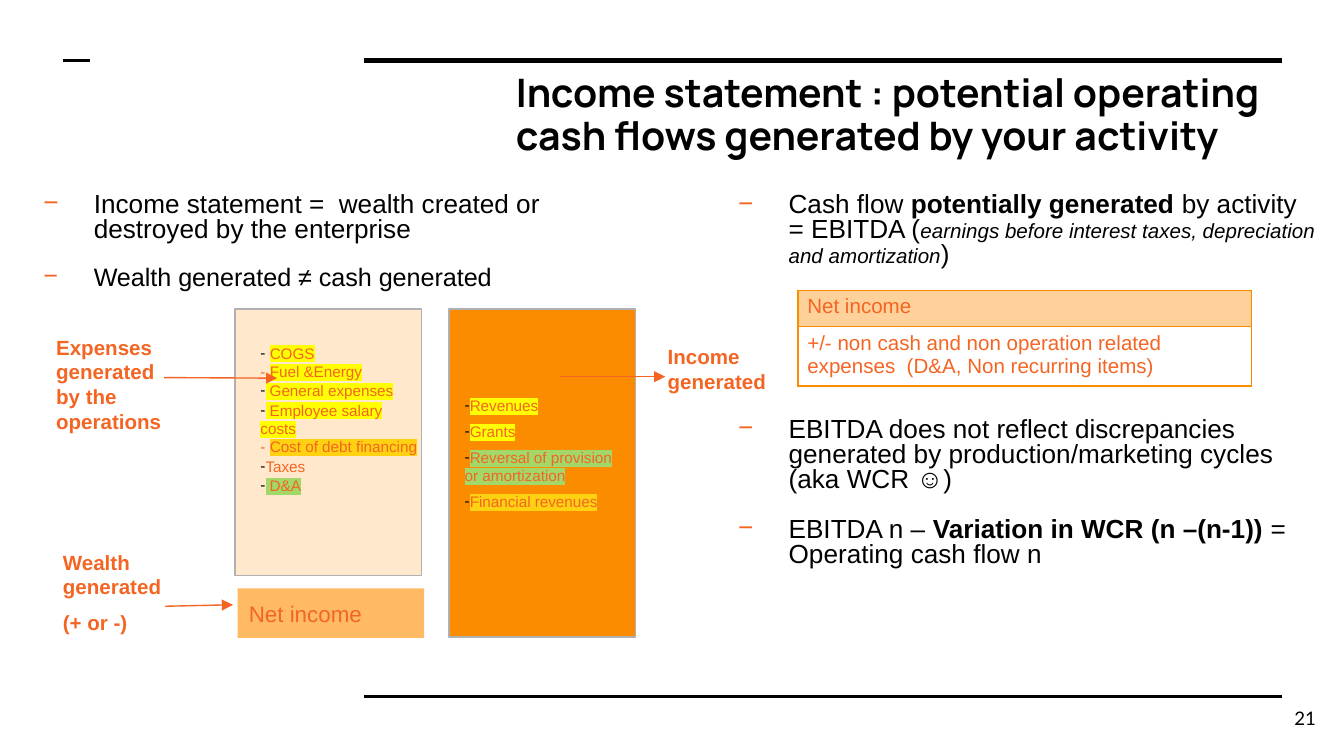
from lxml.etree import SubElement
from pptx import Presentation
from pptx.dml.color import RGBColor
from pptx.enum.shapes import MSO_CONNECTOR, MSO_SHAPE
from pptx.enum.text import MSO_ANCHOR, PP_ALIGN
from pptx.oxml.ns import qn
from pptx.util import Pt

BLACK = RGBColor(0x00, 0x00, 0x00)
ACCENT = RGBColor(0xF4, 0x65, 0x24)
ORANGE = RGBColor(0xFB, 0x8C, 0x00)
CREAM = RGBColor(0xFF, 0xE8, 0xCB)
PEACH = RGBColor(0xFF, 0xBA, 0x63)
GREY = RGBColor(0xB1, 0xB1, 0xB1)
YELLOW = RGBColor(0xFF, 0xFF, 0x00)
GOLD = RGBColor(0xFE, 0xD2, 0x11)
GREEN = RGBColor(0xA3, 0xD8, 0x69)

TITLE = "Income statement : potential operating cash flows generated by your activity"
PAGE = "21"

LEFT_POINTS = [
    (0, 14, [("Income statement =  wealth created or destroyed by the enterprise", {})]),
    (12.4, 13.5, [("Wealth generated ≠ cash generated", {})]),
]
RIGHT_POINTS = [
    (0, 14, [
        ("Cash flow ", {}),
        ("potentially generated ", {"bold": True}),
        ("by activity = EBITDA (", {}),
        ("earnings before interest taxes, depreciation and amortization",
         {"italic": True, "size": Pt(11)}),
        (")", {}),
    ]),
    (80, 14, [("EBITDA does not reflect discrepancies generated by "
               "production/marketing cycles (aka WCR ☺)", {})]),
    (13.4, 14, [
        ("EBITDA n – ", {}),
        ("Variation in WCR (n –(n-1)) ", {"bold": True}),
        ("= Operating cash flow n", {}),
    ]),
]
EXPENSES = [
    [(" ", None), ("COGS", YELLOW), ("\n", None), ("- ", None), ("Fuel &Energy", YELLOW)],
    [(" General expenses", YELLOW)],
    [(" Employee salary costs", YELLOW), ("\n", None), ("- ", None),
     ("Cost of debt financing", GOLD)],
    [("Taxes", None)],
    [(" D&A", GREEN)],
]
INCOME = [
    [("Revenues", YELLOW)],
    [("Grants", YELLOW)],
    [("Reversal of provision or amortization", GREEN)],
    [("Financial revenues", GOLD)],
]
LABELS = [
    ((23, 175.7, 78, 60.5), ["Expenses generated by the operations"]),
    ((350.6, 180.7, 67, 34), ["Income generated"]),
    ((26.6, 290.9, 78, 55), ["Wealth generated", "(+ or -)"]),
]
BLOCKS = [
    ((126, 165.6, 100, 142.6), CREAM, GREY),
    ((240.5, 165.6, 100, 175.7), ORANGE, GREY),
]
NET_INCOME = "Net income"
NET_INCOME_BOX = (127.3, 315.2, 100, 26.5)
RECONCILIATION = [
    NET_INCOME,
    "+/- non cash and non operation related expenses  (D&A, Non recurring items)",
]
RULES = [(195, 32.4, 687, 3), (195, 373, 687, 1.5), (33.6, 32.4, 48, 1.5)]
ARROWS = [
    (88, 202.3, 148.5, 202.6),
    (300.2, 201.8, 356.4, 201.8),
    (88.5, 324.8, 124.8, 324),
]

deck = Presentation()
deck.slide_width, deck.slide_height = Pt(720), Pt(405)
slide = deck.slides.add_slide(deck.slide_layouts[6])


def points(values):
    return [Pt(value) for value in values]


def style(font, size, color, name="Arial", bold=False):
    font.size, font.name, font.bold = Pt(size), name, bold
    font.color.rgb = color


def add_text(box, inset_y=3.6):
    frame = slide.shapes.add_textbox(*points(box)).text_frame
    frame.word_wrap = True
    frame.margin_left = frame.margin_right = Pt(7.2)
    frame.margin_top = frame.margin_bottom = Pt(inset_y)
    return frame


def paragraphs(frame, items):
    for index, item in enumerate(items):
        yield (frame.add_paragraph() if index else frame.paragraphs[0]), item


def add_bullet(paragraph, mark, color, margin, indent):
    props = paragraph._p.get_or_add_pPr()
    props.set("marL", str(Pt(margin)))
    props.set("indent", str(Pt(indent)))
    tint = SubElement(props, qn("a:buClr"))
    SubElement(tint, qn("a:srgbClr"), val=str(color))
    SubElement(props, qn("a:buFont"), typeface="Arial")
    SubElement(props, qn("a:buChar"), char=mark)


def add_points(box, entries):
    for paragraph, (before, size, runs) in paragraphs(add_text(box, 7.2), entries):
        paragraph.line_spacing = 0.8
        paragraph.space_before = Pt(before)
        add_bullet(paragraph, "−", ACCENT, 36, -27)
        style(paragraph.font, size, BLACK)
        for text, changes in runs:
            run = paragraph.add_run()
            run.text = text
            for attribute, value in changes.items():
                setattr(run.font, attribute, value)


def add_accounts(box, accounts, gap):
    for paragraph, (index, runs) in paragraphs(add_text(box), enumerate(accounts)):
        paragraph.space_before = Pt(gap if index else 0)
        add_bullet(paragraph, "-", BLACK, 0, -4.3)
        style(paragraph.font, 8.2, ACCENT)
        for text, marker in runs:
            if text == "\n":
                paragraph.add_line_break()
                continue
            run = paragraph.add_run()
            run.text = text
            if marker:
                highlight = SubElement(run._r.get_or_add_rPr(), qn("a:highlight"))
                SubElement(highlight, qn("a:srgbClr"), val=str(marker))


def add_block(box, fill, outline=None):
    block = slide.shapes.add_shape(MSO_SHAPE.RECTANGLE, *points(box))
    block.shadow.inherit = False
    block.fill.solid()
    block.fill.fore_color.rgb = fill
    if outline:
        block.line.color.rgb = outline
        block.line.width = Pt(0.75)
    else:
        block.line.fill.background()
    return block


def add_line(ends, color, width, arrow=False):
    line = slide.shapes.add_connector(MSO_CONNECTOR.STRAIGHT, *points(ends))
    line.line.color.rgb = color
    line.line.width = Pt(width)
    if arrow:
        SubElement(line.line._get_or_add_ln(), qn("a:tailEnd"), type="triangle")
    SubElement(line._element.spPr, qn("a:effectLst"))


for left, y, right, width in RULES:
    add_line((left, y, right, y), BLACK, width)

heading = add_text((269.3, 32.4, 450.7, 59), 7.2).paragraphs[0]
heading.text = TITLE
heading.line_spacing = 0.9
style(heading.font, 21, BLACK, "Manrope", True)

add_points((7.2, 96.5, 352.8, 280), LEFT_POINTS)
for box, fill, outline in BLOCKS:
    add_block(box, fill, outline)
add_accounts((132.5, 180.7, 100, 144), EXPENSES, 0.5)
add_accounts((241.9, 208.8, 100.8, 83.5), INCOME, 4.1)

for box, lines in LABELS:
    for paragraph, (index, text) in paragraphs(add_text(box), enumerate(lines)):
        paragraph.text = text
        paragraph.space_before = Pt(6 if index else 0)
        style(paragraph.font, 11, ACCENT, bold=True)

net_income = add_block(NET_INCOME_BOX, PEACH).text_frame
net_income.margin_left = Pt(6)
net_income.vertical_anchor = MSO_ANCHOR.MIDDLE
net_income.text = NET_INCOME
net_income.paragraphs[0].alignment = PP_ALIGN.LEFT
style(net_income.paragraphs[0].font, 12, ACCENT)

for ends in ARROWS:
    add_line(ends, ACCENT, 0.75, True)

add_points((379.4, 96.5, 332.6, 220), RIGHT_POINTS)

reconciliation = slide.shapes.add_table(2, 1, *points((427.5, 155.5, 243, 39))).table
reconciliation.first_row = reconciliation.horz_banding = False
for row, text in enumerate(RECONCILIATION):
    cell = reconciliation.cell(row, 0)
    cell.text = text
    cell.margin_left = cell.margin_right = Pt(5)
    cell.margin_top = cell.margin_bottom = Pt(2.7)
    style(cell.text_frame.paragraphs[0].font, 11, ACCENT)
    props = cell._tc.get_or_add_tcPr()
    for side in ("lnL", "lnR", "lnT", "lnB"):
        border = SubElement(props, qn(f"a:{side}"), w=str(Pt(0.75)))
        SubElement(SubElement(border, qn("a:solidFill")), qn("a:srgbClr"), val=str(ORANGE))
    if row:
        cell.fill.background()
    else:
        cell.fill.solid()
        cell.fill.fore_color.rgb = ORANGE
        tint = props.find(qn("a:solidFill")).find(qn("a:srgbClr"))
        SubElement(tint, qn("a:alpha"), val="40000")

page_frame = add_text((668.9, 369.4, 43.2, 31), 7.2)
page_frame.vertical_anchor = MSO_ANCHOR.MIDDLE
page_number = page_frame.paragraphs[0]
page_number.text = PAGE
page_number.alignment = PP_ALIGN.RIGHT
style(page_number.font, 10, BLACK, "Lato")

deck.save("out.pptx")
